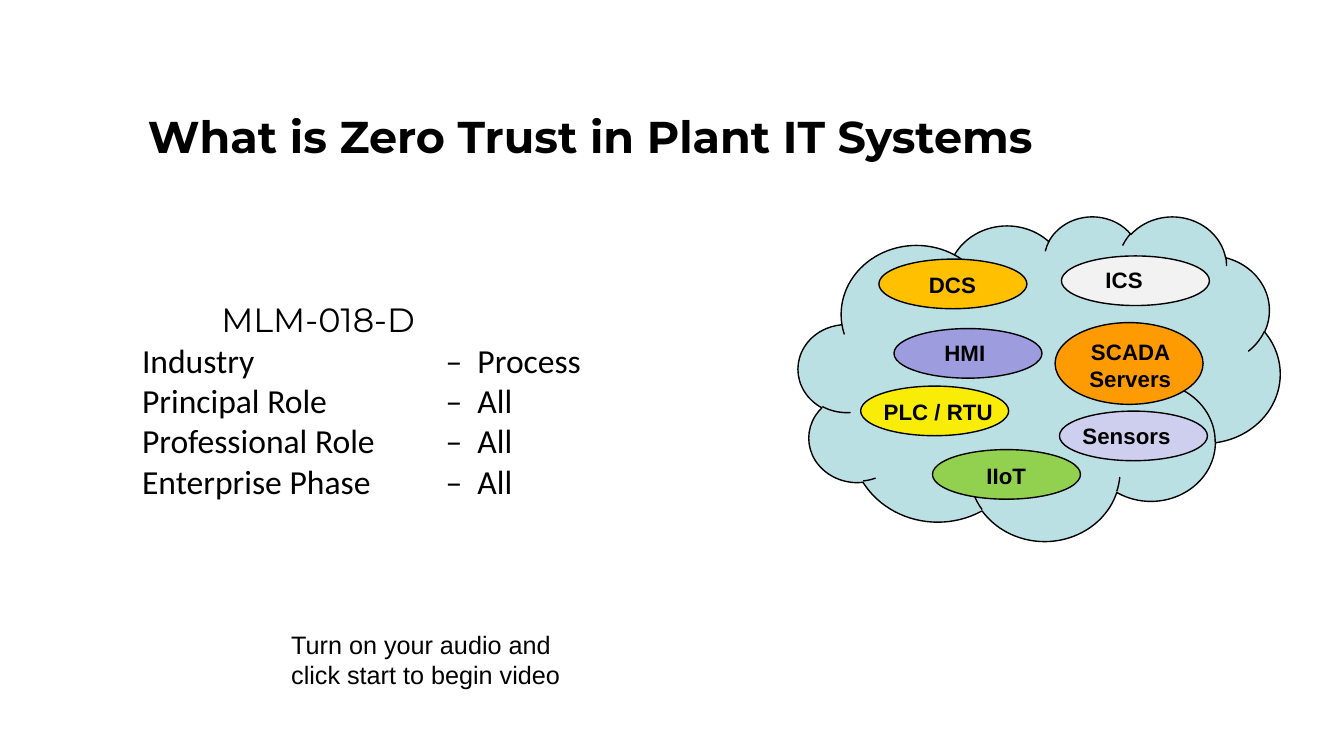
"""Build the title slide on Zero Trust in plant IT systems."""
import pptx
import pptx.dml.color
import pptx.enum.shapes
import pptx.enum.text
import pptx.oxml
import pptx.oxml.ns
import pptx.util

Cm, Pt = pptx.util.Cm, pptx.util.Pt
RGB = pptx.dml.color.RGBColor
SHAPE = pptx.enum.shapes.MSO_SHAPE
ALIGN = pptx.enum.text.PP_ALIGN

BLACK = RGB(0x00, 0x00, 0x00)
PALE_TEAL = RGB(0xBB, 0xE0, 0xE3)
YELLOW = RGB(0xF9, 0xED, 0x07)
LAVENDER = RGB(0xCE, 0xCE, 0xEF)
ORANGE = RGB(0xFE, 0x9B, 0x03)
VIOLET = RGB(0x9C, 0x9C, 0xDF)
GREEN = RGB(0x92, 0xD0, 0x50)
AMBER = RGB(0xFF, 0xC0, 0x00)
LIGHT_GREY = RGB(0xF2, 0xF2, 0xF2)

TITLE = "What is Zero Trust in Plant IT Systems"
CODE = "MLM-018-D"
DETAILS = [
    ("Industry", "Process"),
    ("Principal Role", "All"),
    ("Professional Role", "All"),
    ("Enterprise Phase", "All"),
]
PROMPT = "Turn on your audio and click start to begin video"
CLOUD = (20.12, 5.44, 12.14, 8.18)
OVAL_W, OVAL_H, LABEL_H = 3.73, 1.25, 0.94
SYSTEMS = [
    ("PLC / RTU", YELLOW, (21.69, 9.73, OVAL_W, OVAL_H), (22.02, 9.91, 3.28, LABEL_H)),
    ("Sensors", LAVENDER, (26.7, 10.36, OVAL_W, OVAL_H), (27.03, 10.52, 2.74, LABEL_H)),
    ("SCADA Servers", ORANGE, (26.59, 8.13, OVAL_W, 2.06), (26.44, 8.41, 4.09, 1.63)),
    ("HMI", VIOLET, (22.53, 8.28, OVAL_W, OVAL_H), (23.55, 8.43, 1.55, LABEL_H)),
    ("IIoT", GREEN, (23.5, 11.33, OVAL_W, OVAL_H), (24.61, 11.53, 1.52, LABEL_H)),
    ("DCS", AMBER, (22.15, 6.53, OVAL_W, OVAL_H), (23.16, 6.71, 1.78, LABEL_H)),
    ("ICS", LIGHT_GREY, (26.75, 6.45, OVAL_W, OVAL_H), (27.61, 6.58, 1.45, LABEL_H)),
]
TITLE_FONT = {"name": "Montserrat", "size": Pt(31.8), "bold": True}
CODE_FONT = {"name": "Montserrat", "size": Pt(24)}
DETAIL_FONT = {"name": "Calibri", "size": Pt(24)}
PROMPT_FONT = {"name": "Arial", "size": Pt(18)}
LABEL_FONT = {"name": "Arial", "size": Pt(15.9), "bold": True}
CODE_INDENT, DASH_TAB = Cm(2), Cm(7.65)


def add_outline(shapes, kind, box, color):
    sp = shapes.add_shape(kind, *map(Cm, box))
    sp.shadow.inherit = False
    sp.fill.solid()
    sp.fill.fore_color.rgb = color
    sp.line.color.rgb = BLACK
    sp.line.width = Pt(1)


def add_frame(shapes, box, margins=None, wrap=True):
    tf = shapes.add_textbox(*map(Cm, box)).text_frame
    tf.word_wrap = wrap
    if margins is not None:
        for side, value in zip(("left", "top", "right", "bottom"), margins):
            setattr(tf, f"margin_{side}", Cm(value))
    return tf


def write(p, text, style):
    r = p.add_run()
    r.text = text
    r.font.color.rgb = BLACK
    for key, value in style.items():
        setattr(r.font, key, value)


def add_tab(p, position):
    tabs = pptx.oxml.parse_xml(
        f'<a:tabLst {pptx.oxml.ns.nsdecls("a")}><a:tab pos="{position}" algn="l"/></a:tabLst>')
    p._p.get_or_add_pPr().append(tabs)


def main():
    prs = pptx.Presentation()
    prs.slide_width, prs.slide_height = Cm(33.87), Cm(19.05)
    s = prs.slides.add_slide(prs.slide_layouts[6])

    group = s.shapes.add_group_shape().shapes
    add_outline(group, SHAPE.CLOUD, CLOUD, PALE_TEAL)
    for name, color, oval, label in SYSTEMS:
        add_outline(group, SHAPE.OVAL, oval, color)
        two_words = name == "SCADA Servers"
        p = add_frame(group, label, wrap=two_words).paragraphs[0]
        p.alignment = ALIGN.CENTER if two_words else ALIGN.LEFT
        write(p, name, LABEL_FONT)

    tf = add_frame(s.shapes, (3.45, 2.59, 25.22, 3.81), (0.28, 0.15, 0.28, 0.15))
    write(tf.paragraphs[0], TITLE, TITLE_FONT)

    tf = add_frame(s.shapes, (3.58, 7.54, 15.75, 5.66), (0, 0, 0, 0))
    p = tf.paragraphs[0]
    p._p.get_or_add_pPr().set("marL", str(CODE_INDENT))
    write(p, CODE, CODE_FONT)
    for field, value in DETAILS:
        p = tf.add_paragraph()
        add_tab(p, DASH_TAB)
        write(p, f"{field}\t–  {value}", DETAIL_FONT)

    tf = add_frame(s.shapes, (7.34, 15.85, 7.67, 1.55), (0, 0, 0, 0))
    write(tf.paragraphs[0], PROMPT, PROMPT_FONT)
    prs.save("out.pptx")


if __name__ == "__main__":
    main()
